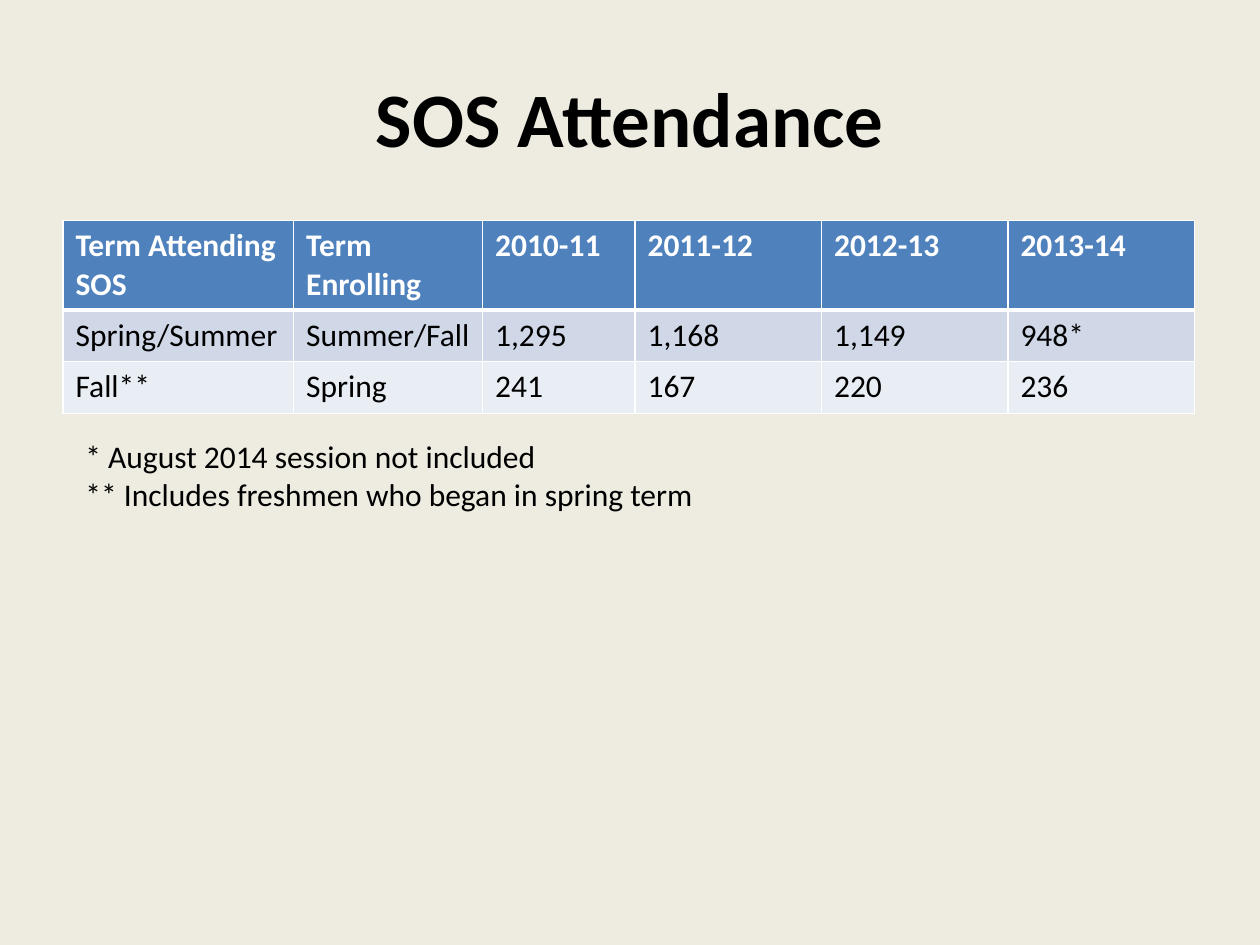
from lxml.etree import SubElement
from pptx import Presentation
from pptx.dml.color import RGBColor
from pptx.enum.text import MSO_ANCHOR as Anchor, MSO_AUTO_SIZE as Fit, PP_ALIGN as Align
from pptx.oxml.ns import qn
from pptx.util import Inches, Pt

BLACK = RGBColor(0, 0, 0)
WHITE = RGBColor(255, 255, 255)
CREAM = RGBColor(0xEE, 0xEC, 0xE1)
BLUE = RGBColor(0x4F, 0x81, 0xBD)
FILLS = [BLUE, RGBColor(0xD0, 0xD8, 0xE8), RGBColor(0xE9, 0xED, 0xF4)]
FONT = "Calibri"
ROWS = [
    ["Term Attending SOS", "Term Enrolling", "2010-11", "2011-12", "2012-13", "2013-14"],
    ["Spring/Summer", "Summer/Fall", "1,295", "1,168", "1,149", "948*"],
    ["Fall**", "Spring", "241", "167", "220", "236"],
]
WIDTHS = [1.83, 1.5, 1.21, 1.48, 1.48, 1.48]
HEIGHTS = [0.7, 0.41, 0.41]
NOTES = ["* August 2014 session not included",
         "** Includes freshmen who began in spring term"]


def style(frame, size, color=BLACK, bold=False):
    for para in frame.paragraphs:
        for run in para.runs:
            font = run.font
            font.name, font.size, font.bold = FONT, Pt(size), bold
            font.color.rgb = color


def add_edge(cell, side, width):
    line = SubElement(cell._tc.get_or_add_tcPr(), qn(f"a:{side}"), w=str(Pt(width)))
    fill = SubElement(line, qn("a:solidFill"))
    SubElement(fill, qn("a:srgbClr"), val=str(WHITE))


def fill_cell(cell, text, row):
    cell.text_frame.text = text
    head = row == 0
    style(cell.text_frame, 18, WHITE if head else BLACK, head)
    widths = {"lnL": 1, "lnR": 1, "lnT": 3 if row == 1 else 1, "lnB": 3 if head else 1}
    for side, width in widths.items():
        add_edge(cell, side, width)
    cell.fill.solid()
    cell.fill.fore_color.rgb = FILLS[row]


def add_title(slide, text):
    title = slide.shapes.title
    title.left, title.top = Inches(0.5), Inches(0.3)
    title.width, title.height = Inches(9), Inches(1.25)
    frame = title.text_frame
    frame.text = text
    frame.vertical_anchor = Anchor.MIDDLE
    frame.paragraphs[0].alignment = Align.CENTER
    style(frame, 44, bold=True)


def add_grid(slide):
    table = slide.shapes.add_table(len(ROWS), len(WIDTHS), Inches(0.5), Inches(1.75),
                                   Inches(9), Inches(1.51)).table
    for col, width in zip(table.columns, WIDTHS):
        col.width = Inches(width)
    for row, height in zip(table.rows, HEIGHTS):
        row.height = Inches(height)
    for r, texts in enumerate(ROWS):
        for c, text in enumerate(texts):
            fill_cell(table.cell(r, c), text, r)


def add_notes(slide):
    box = slide.shapes.add_textbox(Inches(0.58), Inches(3.42), Inches(8.92), Inches(0.71))
    frame = box.text_frame
    frame.word_wrap = True
    frame.auto_size = Fit.SHAPE_TO_FIT_TEXT
    frame.text = "\n".join(NOTES)
    style(frame, 18)


def main():
    deck = Presentation()
    deck.slide_width, deck.slide_height = Inches(10), Inches(7.5)
    slide = deck.slides.add_slide(deck.slide_layouts[5])
    back = slide.background.fill
    back.solid()
    back.fore_color.rgb = CREAM
    add_title(slide, "SOS Attendance")
    add_grid(slide)
    add_notes(slide)
    deck.save("out.pptx")


if __name__ == "__main__":
    main()
